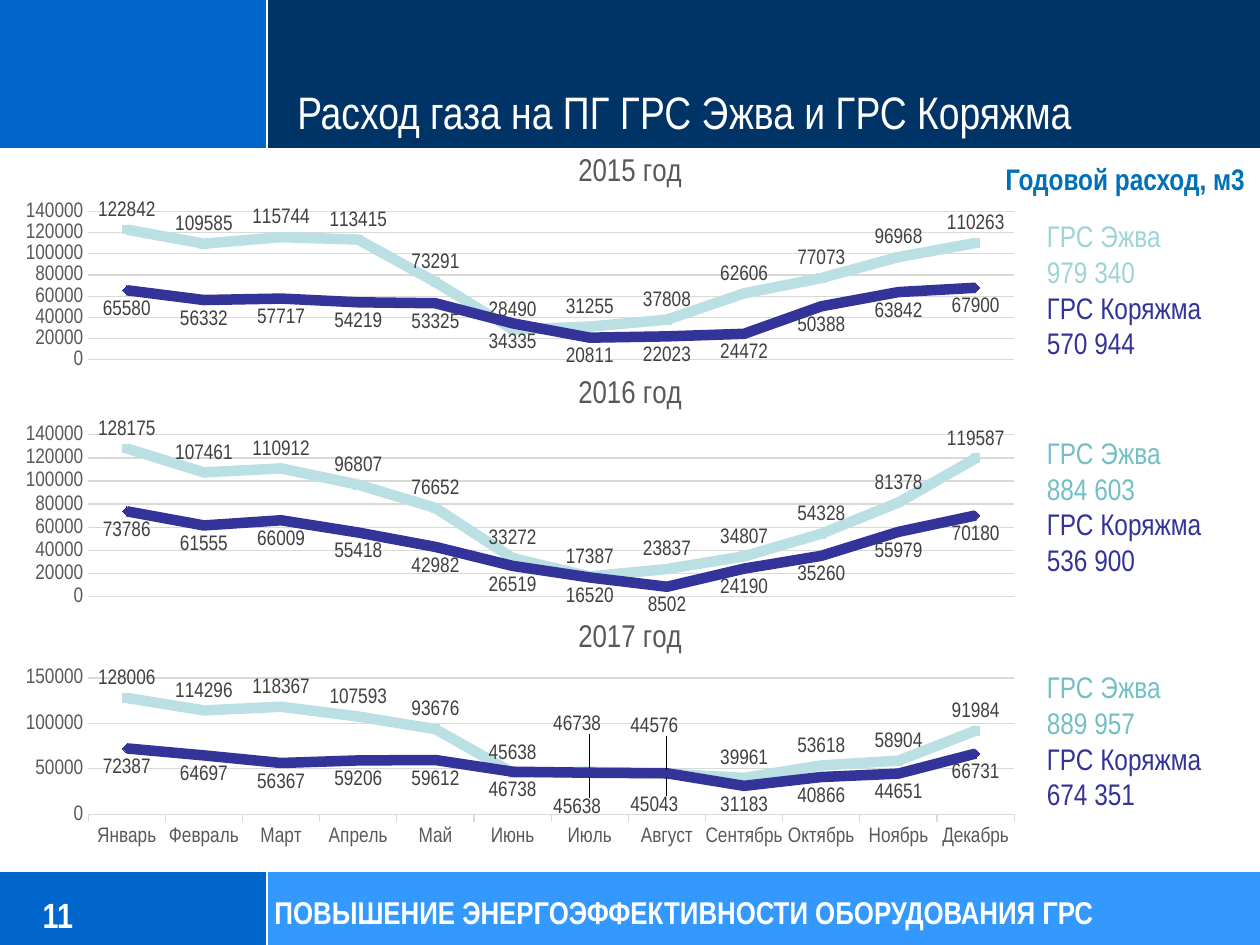
from dataclasses import dataclass

from lxml import etree
from pptx import Presentation
from pptx.chart.data import CategoryChartData
from pptx.dml.color import RGBColor
from pptx.enum.chart import XL_CHART_TYPE, XL_LABEL_POSITION, XL_TICK_MARK
from pptx.enum.shapes import MSO_CONNECTOR, MSO_SHAPE
from pptx.enum.text import MSO_ANCHOR, PP_ALIGN
from pptx.oxml import parse_xml
from pptx.oxml.ns import nsdecls, qn
from pptx.util import Inches, Pt

LINE = XL_CHART_TYPE.LINE
ABOVE, BELOW = XL_LABEL_POSITION.ABOVE, XL_LABEL_POSITION.BELOW
NONE, OUT = XL_TICK_MARK.NONE, XL_TICK_MARK.OUTSIDE
LEFT, CENTER = PP_ALIGN.LEFT, PP_ALIGN.CENTER


@dataclass(frozen=True)
class Theme:
    font: str = "Arial Narrow"
    white: str = "FFFFFF"
    blue: str = "0066CC"
    navy: str = "003366"
    sky: str = "3399FF"
    head: str = "0071B9"
    pale: str = "BBE0E3"
    dark: str = "333399"
    grid: str = "D9D9D9"
    axis: str = "595959"
    label: str = "404040"
    title: int = 26
    page: int = 20
    foot: int = 18
    note: int = 17
    small: int = 12


T = Theme()
W, H = 10, 7.5
SPLIT, TOP, BASE = 2.12, 1.18, 6.91
NOTE_X = 8.21

TITLE = "Расход газа на ПГ ГРС Эжва и ГРС Коряжма"
HEAD = "Годовой расход, м3"
FOOT = "ПОВЫШЕНИЕ ЭНЕРГОЭФФЕКТИВНОСТИ ОБОРУДОВАНИЯ ГРС"
PAGE = "11"
NAMES = ("ГРС Эжва", "ГРС Коряжма")
MONTHS = ("Январь", "Февраль", "Март", "Апрель", "Май", "Июнь", "Июль",
          "Август", "Сентябрь", "Октябрь", "Ноябрь", "Декабрь")
NUMS = [str(n) for n in range(1, 13)]

# box: top and height in inches; plot: x, y, w, h as shares of the chart
YEARS = [
    dict(name="2015 год", box=(1.1, 1.93), plot=(0.07, 0.3, 0.735, 0.61),
         cats=NUMS, top=140000, step=20000,
         vals=[(122842, 109585, 115744, 113415, 73291, 28490,
                31255, 37808, 62606, 77073, 96968, 110263),
               (65580, 56332, 57717, 54219, 53325, 34335,
                20811, 22023, 24472, 50388, 63842, 67900)],
         sums=("979 340", "570 944"), note=1.68, tint="9ED3D7", moves=({}, {})),
    dict(name="2016 год", box=(2.86, 2.04), plot=(0.07, 0.29, 0.735, 0.63),
         cats=NUMS, top=140000, step=20000,
         vals=[(128175, 107461, 110912, 96807, 76652, 33272,
                17387, 23837, 34807, 54328, 81378, 119587),
               (73786, 61555, 66009, 55418, 42982, 26519,
                16520, 8502, 24190, 35260, 55979, 70180)],
         sums=("884 603", "536 900"), note=3.4, tint="72BFC5", moves=({}, {})),
    dict(name="2017 год", box=(4.79, 2.04), plot=(0.07, 0.29, 0.735, 0.53),
         cats=MONTHS, top=150000, step=50000,
         vals=[(128006, 114296, 118367, 107593, 93676, 45638,
                46738, 44576, 39961, 53618, 58904, 91984),
               (72387, 64697, 56367, 59206, 59612, 46738,
                45638, 45043, 31183, 40866, 44651, 66731)],
         sums=("889 957", "674 351"), note=5.26, tint="72BFC5",
         moves=({6: (-0.01, -0.11), 7: (-0.01, -0.11)},
                {6: (-0.01, 0.06), 7: (-0.01, 0.05)})),
]


def rgb(code):
    return RGBColor.from_string(code)


def style(font, size, color, bold=False):
    font.name, font.size, font.bold = T.font, Pt(size), bold
    font.color.rgb = rgb(color)


def panel(x, y, w, h, color):
    box = slide.shapes.add_shape(MSO_SHAPE.RECTANGLE, *map(Inches, (x, y, w, h)))
    box.shadow.inherit = False
    box.fill.solid()
    box.fill.fore_color.rgb = rgb(color)
    box.line.fill.background()


def rule(*ends):
    line = slide.shapes.add_connector(MSO_CONNECTOR.STRAIGHT, *map(Inches, ends))
    line.line.color.rgb = rgb(T.white)
    line.line.width = Pt(1.25)
    etree.SubElement(line.element.spPr, qn("a:effectLst"))


def write(x, y, w, h, rows, size, bold=False, align=LEFT, space=None):
    """Add a text box; rows holds (text, color) pairs."""
    frame = slide.shapes.add_textbox(*map(Inches, (x, y, w, h))).text_frame
    frame.word_wrap = True
    for i, (text, color) in enumerate(rows):
        para = frame.add_paragraph() if i else frame.paragraphs[0]
        para.alignment, para.line_spacing = align, space
        run = para.add_run()
        run.text = text
        style(run.font, size, color, bold)


def layout(x, y, size=None):
    """Return a manual chart layout: an inner plot box, or a label shift."""
    parts = []
    if size:
        parts += [("layoutTarget", "inner"), ("xMode", "edge"), ("yMode", "edge")]
    parts += [("x", x), ("y", y)]
    if size:
        parts += [("w", size[0]), ("h", size[1])]
    body = "".join(f'<c:{tag} val="{val}"/>' for tag, val in parts)
    return parse_xml(f'<c:layout {nsdecls("c")}><c:manualLayout>{body}'
                     '</c:manualLayout></c:layout>')


def place(node, new, first):
    """Put a layout in node at index first, in place of any old one."""
    for old in node.findall(qn("c:layout")):
        node.remove(old)
    node.insert(first, new)


def tag(labels, pos):
    style(labels.font, T.small, T.label)
    labels.position = pos


def draw(year):
    data = CategoryChartData(number_format="General")
    data.categories = year["cats"]
    for name, vals in zip(NAMES, year["vals"]):
        data.add_series(name, vals)
    top, high = year["box"]
    chart = slide.shapes.add_chart(LINE, 0, Inches(top), Inches(W),
                                   Inches(high), data).chart
    style(chart.font, 10, "000000")
    chart.has_legend = False
    chart.has_title = True
    run = chart.chart_title.text_frame.paragraphs[0].add_run()
    run.text = year["name"]
    style(run.font, T.foot, T.axis)
    chart.plots[0].vary_by_categories = False

    val, cat = chart.value_axis, chart.category_axis
    val.minimum_scale, val.maximum_scale = 0, year["top"]
    val.major_unit = year["step"]
    val.major_tick_mark = NONE
    val.format.line.fill.background()
    grid = val.major_gridlines.format.line
    cat.visible = year["cats"] is MONTHS
    cat.major_tick_mark = OUT
    for line in (grid, cat.format.line):
        line.color.rgb, line.width = rgb(T.grid), Pt(0.75)
    for axis in (val, cat):
        style(axis.tick_labels.font, T.small, T.axis)

    looks = zip(chart.plots[0].series, (T.pale, T.dark), (ABOVE, BELOW), year["moves"])
    for line, color, pos, moves in looks:
        line.smooth = False
        line.marker.style = None
        line.format.line.color.rgb = rgb(color)
        line.format.line.width = Pt(6)
        line.data_labels.show_value = True
        tag(line.data_labels, pos)
        for i in moves:
            tag(line.points[i].data_label, pos)
        for node in line.data_labels._element.findall(qn("c:dLbl")):
            shift = moves[int(node.find(qn("c:idx")).get("val"))]
            place(node, layout(*shift), 1)

    x, y, *size = year["plot"]
    area = chart.element.find(".//" + qn("c:plotArea"))
    place(area, layout(x, y, size), 0)


deck = Presentation()
deck.slide_width, deck.slide_height = Inches(W), Inches(H)
slide = deck.slides.add_slide(deck.slide_layouts[5])

for y, h, color in ((BASE, H - BASE, T.sky), (0, TOP, T.navy)):
    panel(0, y, SPLIT, h, T.blue)
    panel(SPLIT, y, W - SPLIT, h, color)
    rule(SPLIT, y, SPLIT, y + h)
for y in (BASE, TOP):
    rule(0, y, W, y)

for year in YEARS:
    draw(year)
for year in YEARS:
    tints = (year["tint"], T.dark)
    rows = [(text, tint) for name, total, tint in zip(NAMES, year["sums"], tints)
            for text in (name, total)]
    write(NOTE_X, year["note"], 1.69, 1.25, rows, T.note)

title = slide.shapes.title
title.left, title.top, title.width, title.height = map(Inches, (2.36, 0, 7.64, 1.1))
title.element.getparent().append(title.element)
frame = title.text_frame
frame.margin_left = frame.margin_top = frame.margin_right = frame.margin_bottom = 0
frame.vertical_anchor = MSO_ANCHOR.BOTTOM
frame.paragraphs[0].alignment = LEFT
run = frame.paragraphs[0].add_run()
run.text = TITLE
style(run.font, T.title, T.white)

write(7.86, 1.23, 2.14, 0.39, [(HEAD, T.head)], T.note, True, CENTER)
write(0.24, 7.02, 1.68, 0.43, [(PAGE, T.white)], T.page, True, space=1.07)
write(2.08, 7.02, 7.73, 0.43, [(FOOT, T.white)], T.foot, True, space=1.07)

deck.save("out.pptx")
